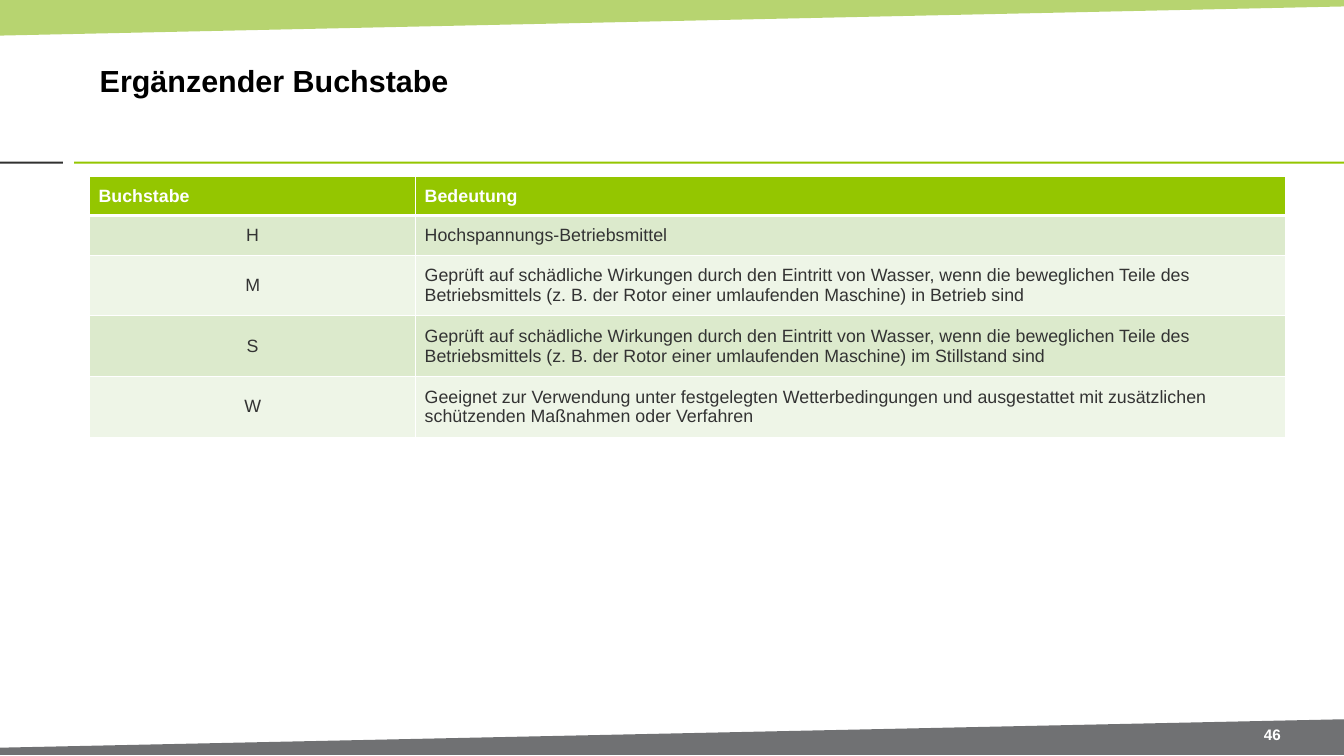
from dataclasses import dataclass

import pptx
import pptx.dml.color
import pptx.enum.shapes
import pptx.enum.text
import pptx.oxml.ns
import pptx.util
from lxml import etree
from pptx.dml.color import RGBColor
from pptx.enum.text import MSO_ANCHOR, PP_ALIGN
from pptx.util import Cm, Pt

WHITE = RGBColor(0xFF, 0xFF, 0xFF)
BLACK = RGBColor(0x00, 0x00, 0x00)
TEXT_GREY = RGBColor(0x33, 0x33, 0x33)
RULE_GREY = RGBColor(0x31, 0x31, 0x30)
FOOTER_GREY = RGBColor(0x70, 0x71, 0x73)
BAND_GREEN = RGBColor(0x95, 0xC0, 0x2A)
ACCENT_GREEN = RGBColor(0x94, 0xC6, 0x00)
ROW_GREENS = (RGBColor(0xDC, 0xEA, 0xCC), RGBColor(0xEE, 0xF5, 0xE7))

FONT = "Arial"
SLIDE_WIDTH, SLIDE_HEIGHT = 37.34, 21.01
MARGIN_LEFT = 2.49
COLUMN_WIDTHS = (9.06, 24.16)
HEADER = ("Buchstabe", "Bedeutung")


@dataclass(frozen=True)
class Band:
    points: tuple[tuple[float, float], ...]
    color: RGBColor
    opacity: int = 100


@dataclass(frozen=True)
class Rule:
    left: float
    right: float
    color: RGBColor


@dataclass(frozen=True)
class Letter:
    letter: str
    meaning: str
    height: float = 1.64


BANDS = (
    Band(((0, 0), (SLIDE_WIDTH, 0), (SLIDE_WIDTH, 0.18), (0, 0.99)), BAND_GREEN, 67),
    Band(((SLIDE_WIDTH, 20.98), (0, 20.98), (0, 20.78), (SLIDE_WIDTH, 19.99)), FOOTER_GREY),
)
RULES = (
    Rule(0, 1.75, RULE_GREY),
    Rule(2.06, SLIDE_WIDTH, ACCENT_GREEN),
)
LETTERS = (
    Letter("H", "Hochspannungs-Betriebsmittel", 1.09),
    Letter("M", "Geprüft auf schädliche Wirkungen durch den Eintritt von Wasser, wenn die "
                "beweglichen Teile des Betriebsmittels (z. B. der Rotor einer umlaufenden "
                "Maschine) in Betrieb sind"),
    Letter("S", "Geprüft auf schädliche Wirkungen durch den Eintritt von Wasser, wenn die "
                "beweglichen Teile des Betriebsmittels (z. B. der Rotor einer umlaufenden "
                "Maschine) im Stillstand sind"),
    Letter("W", "Geeignet zur Verwendung unter festgelegten Wetterbedingungen und "
                "ausgestattet mit zusätzlichen schützenden Maßnahmen oder Verfahren"),
)


def write_text(text_frame, text: str, *, size: float, color: RGBColor, bold: bool = False,
               align: PP_ALIGN = PP_ALIGN.LEFT) -> None:
    text_frame.word_wrap = True
    paragraph = text_frame.paragraphs[0]
    paragraph.text = text
    paragraph.alignment = align
    paragraph.font.name = FONT
    paragraph.font.size = Pt(size)
    paragraph.font.bold = bold
    paragraph.font.color.rgb = color


def place_text(shape, left: float, top: float, width: float, height: float) -> None:
    """Set position, insets and vertical centring of a text shape."""
    shape.left, shape.top = Cm(left), Cm(top)
    shape.width, shape.height = Cm(width), Cm(height)
    frame = shape.text_frame
    frame.margin_left = frame.margin_right = Cm(0.28)
    frame.margin_top = frame.margin_bottom = Cm(0.15)
    frame.vertical_anchor = MSO_ANCHOR.MIDDLE


def paint(shape, color: RGBColor) -> None:
    shape.shadow.inherit = False
    shape.fill.solid()
    shape.fill.fore_color.rgb = color
    shape.line.fill.background()


def draw_band(slide, band: Band) -> None:
    start, *others = [(Cm(x), Cm(y)) for x, y in band.points]
    builder = slide.shapes.build_freeform(*start)
    builder.add_line_segments(others, close=True)
    shape = builder.convert_to_shape()
    paint(shape, band.color)
    if band.opacity < 100:
        color = shape.fill._xPr.find(".//" + pptx.oxml.ns.qn("a:srgbClr"))
        etree.SubElement(color, pptx.oxml.ns.qn("a:alpha"), val=str(band.opacity * 1000))


def draw_rule(slide, rule: Rule) -> None:
    shape = slide.shapes.add_shape(
        pptx.enum.shapes.MSO_SHAPE.RECTANGLE,
        Cm(rule.left), Cm(4.49), Cm(rule.right - rule.left), Cm(0.06))
    paint(shape, rule.color)


def set_borders(cell, bottom: float, top: float) -> None:
    """Give a cell white borders; widths are in points."""
    properties = cell._tc.get_or_add_tcPr()
    for side, width in (("L", 1), ("R", 1), ("T", top), ("B", bottom)):
        line = etree.SubElement(properties, pptx.oxml.ns.qn(f"a:ln{side}"), w=str(Pt(width)))
        fill = etree.SubElement(line, pptx.oxml.ns.qn("a:solidFill"))
        etree.SubElement(fill, pptx.oxml.ns.qn("a:srgbClr"), val=str(WHITE))


def draw_table(slide) -> None:
    heights = [1.04] + [entry.height for entry in LETTERS]
    table = slide.shapes.add_table(
        len(heights), len(COLUMN_WIDTHS), Cm(MARGIN_LEFT), Cm(4.9),
        Cm(sum(COLUMN_WIDTHS)), Cm(sum(heights))).table
    table.horz_banding = False
    for column, width in zip(table.columns, COLUMN_WIDTHS):
        column.width = Cm(width)
    for row, height in zip(table.rows, heights):
        row.height = Cm(height)

    rows = [HEADER] + [(entry.letter, entry.meaning) for entry in LETTERS]
    for row_index, texts in enumerate(rows):
        is_header = row_index == 0
        for column_index, text in enumerate(texts):
            cell = table.cell(row_index, column_index)
            set_borders(cell, bottom=3 if is_header else 1, top=3 if row_index == 1 else 1)
            cell.fill.solid()
            cell.fill.fore_color.rgb = ACCENT_GREEN if is_header else ROW_GREENS[(row_index - 1) % 2]
            cell.margin_left = cell.margin_right = Cm(0.25)
            cell.margin_top = cell.margin_bottom = Cm(0.25)
            cell.vertical_anchor = MSO_ANCHOR.MIDDLE
            centred = not is_header and column_index == 0
            write_text(cell.text_frame, text, size=14, bold=is_header,
                       color=WHITE if is_header else TEXT_GREY,
                       align=PP_ALIGN.CENTER if centred else PP_ALIGN.LEFT)


def main() -> None:
    presentation = pptx.Presentation()
    presentation.slide_width = Cm(SLIDE_WIDTH)
    presentation.slide_height = Cm(SLIDE_HEIGHT)
    slide = presentation.slides.add_slide(presentation.slide_layouts.get_by_name("Title Only"))

    for band in BANDS:
        draw_band(slide, band)
    for rule in RULES:
        draw_rule(slide, rule)

    title = slide.shapes.title
    place_text(title, MARGIN_LEFT, 0.71, 29.31, 3.02)
    write_text(title.text_frame, "Ergänzender Buchstabe", size=24, color=BLACK, bold=True)

    page_number = slide.shapes.add_textbox(0, 0, 0, 0)
    place_text(page_number, 34.26, 20.04, 2.18, 0.74)
    write_text(page_number.text_frame, "46", size=12, color=WHITE, bold=True,
               align=PP_ALIGN.CENTER)

    draw_table(slide)
    presentation.save("out.pptx")


if __name__ == "__main__":
    main()
